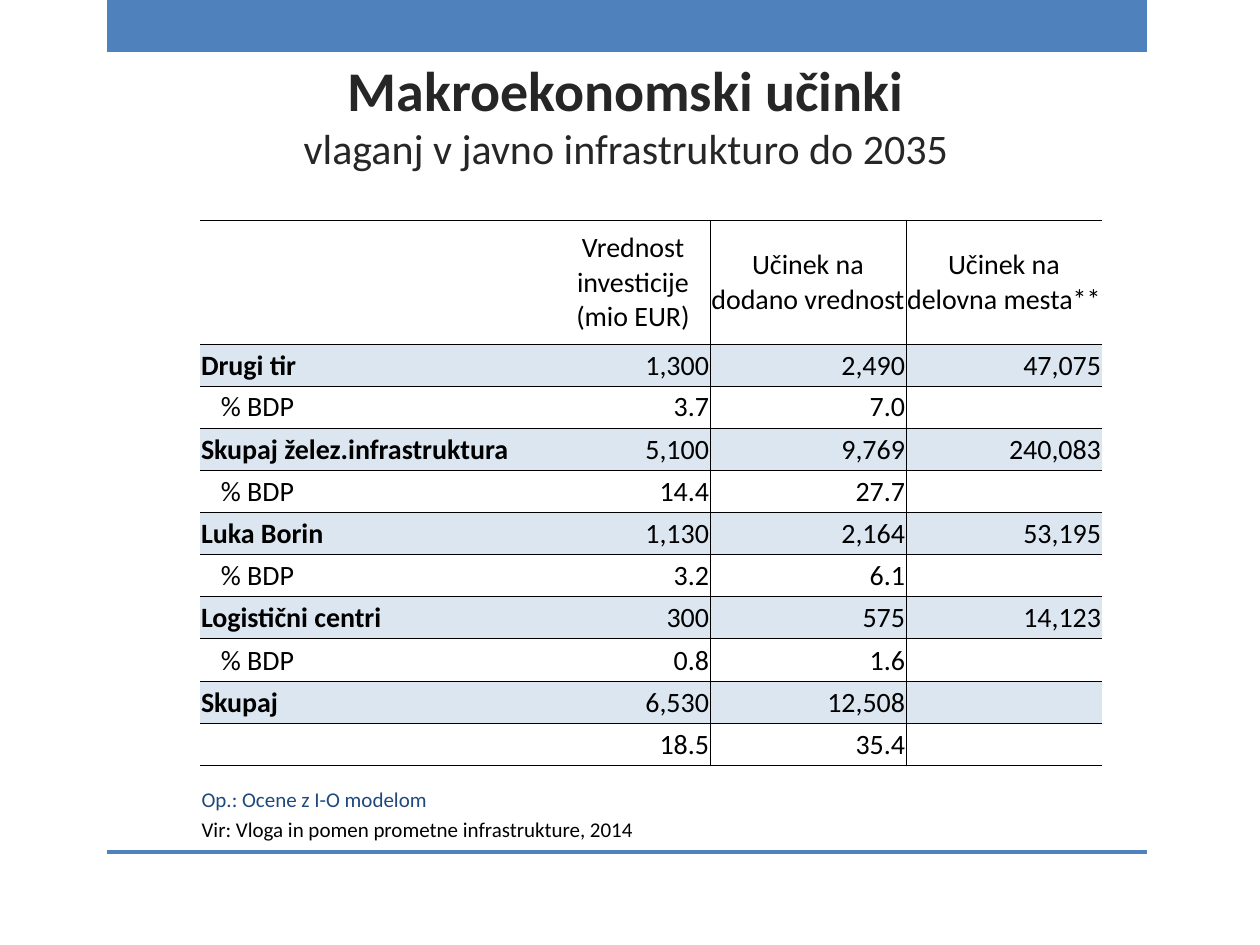
import copy

import pptx
import pptx.dml.color
import pptx.enum.shapes
import pptx.enum.text
import pptx.oxml
import pptx.oxml.ns
import pptx.util

HUES = {"bar": "4F81BD", "title": "262626", "note": "1F497D",
        "ink": "000000", "band": "DCE6F1", "plain": "FFFFFF"}
ALIGN = pptx.enum.text.PP_ALIGN
ANCHOR = pptx.enum.text.MSO_ANCHOR
NO_STYLE = "{2D5ABB26-0587-4C30-8999-92F81FD0307C}"


def emu(px):
    return pptx.util.Emu(round(px * 914400 / 126))


def hue(name):
    return pptx.dml.color.RGBColor.from_string(HUES[name])


class Deck:
    font = "Calibri"

    def __init__(self):
        self.prs = pptx.Presentation()
        self.prs.slide_width, self.prs.slide_height = emu(1260), emu(945)
        self.slide = self.prs.slides.add_slide(self.prs.slide_layouts[1])

    def style(self, run, size, color, bold=False):
        run.font.name = self.font
        run.font.size = pptx.util.Pt(size)
        run.font.bold = bold
        run.font.color.rgb = hue(color)

    def place(self, shape, box):
        shape.left, shape.top, shape.width, shape.height = map(emu, box)

    def bar(self, *box):
        kind = pptx.enum.shapes.MSO_SHAPE.RECTANGLE
        shape = self.slide.shapes.add_shape(kind, *map(emu, box))
        shape.shadow.inherit = False
        shape.fill.solid()
        shape.fill.fore_color.rgb = hue("bar")
        shape.line.fill.background()
        # Bars lie behind the placeholders
        self.slide.shapes._spTree.insert(2, shape._element)

    def title(self, box, head, sub):
        shape = self.slide.shapes.title
        self.place(shape, box)
        frame = shape.text_frame
        frame.text = head + "\v" + sub
        frame.auto_size = pptx.enum.text.MSO_AUTO_SIZE.NONE
        frame.vertical_anchor = ANCHOR.BOTTOM
        para = frame.paragraphs[0]
        para.alignment = ALIGN.CENTER
        top, low = para.runs
        self.style(top, 32, "title", True)
        self.style(low, 24, "title")
        # The line break takes the size of the first line
        gap = para._p.find(pptx.oxml.ns.qn("a:br"))
        gap.insert(0, copy.deepcopy(top._r.rPr))

    def notes(self, box, lines):
        shape = self.slide.placeholders[1]
        self.place(shape, box)
        frame = shape.text_frame
        frame.text = "\n".join(text for text, color in lines)
        frame.auto_size = pptx.enum.text.MSO_AUTO_SIZE.NONE
        frame.vertical_anchor = ANCHOR.MIDDLE
        for para, (text, color) in zip(frame.paragraphs, lines):
            props = para._p.get_or_add_pPr()
            props.set("marL", "0")
            props.set("indent", "0")
            pptx.oxml.ns.qn("a:buNone")
            props.append(pptx.oxml.parse_xml(
                f'<a:buNone {pptx.oxml.ns.nsdecls("a")}/>'))
            self.style(para.runs[0], 12, color)

    def edges(self, cell, sides):
        props = cell._tc.get_or_add_tcPr()
        for side in sides:
            props.append(pptx.oxml.parse_xml(
                f'<a:ln{side} {pptx.oxml.ns.nsdecls("a")} w="6350"><a:solidFill>'
                f'<a:srgbClr val="{HUES["ink"]}"/></a:solidFill></a:ln{side}>'))

    def cell(self, cell, text, row, col):
        band = row % 2 == 1
        rules = {"L": col > 1, "R": col in (1, 2),
                 "T": row == 0 or band, "B": not band}
        self.edges(cell, [side for side, on in rules.items() if on])
        cell.fill.solid()
        cell.fill.fore_color.rgb = hue("band" if band else "plain")
        cell.vertical_anchor = ANCHOR.MIDDLE
        inset = 21 if col == 0 and row and not band else 1
        cell.margin_left = emu(inset)
        cell.margin_right = cell.margin_top = emu(1)
        cell.margin_bottom = 0
        cell.text_frame.text = text
        para = cell.text_frame.paragraphs[0]
        if col:
            para.alignment = ALIGN.RIGHT if row else ALIGN.CENTER
        for run in para.runs:
            self.style(run, 16, "ink", band and col == 0)

    def table(self, left, top, cols, rows, data):
        box = left, top, sum(cols), sum(rows)
        table = self.slide.shapes.add_table(
            len(rows), len(cols), *map(emu, box)).table
        table.first_row = table.horz_banding = False
        mark = pptx.oxml.ns.qn("a:tableStyleId")
        table._tbl.tblPr.find(mark).text = NO_STYLE
        for col, width in zip(table.columns, cols):
            col.width = emu(width)
        for row, height in zip(table.rows, rows):
            row.height = emu(height)
        for r, line in enumerate(data):
            for c, text in enumerate(line):
                self.cell(table.cell(r, c), text, r, c)


DATA = [
    ("", "Vrednost investicije (mio EUR)", "Učinek na dodano vrednost",
     "Učinek na delovna mesta**"),
    ("Drugi tir", "1,300", "2,490", "47,075"),
    ("% BDP", "3.7", "7.0", ""),
    ("Skupaj želez.infrastruktura", "5,100", "9,769", "240,083"),
    ("% BDP", "14.4", "27.7", ""),
    ("Luka Borin", "1,130", "2,164", "53,195"),
    ("% BDP", "3.2", "6.1", ""),
    ("Logistični centri", "300", "575", "14,123"),
    ("% BDP", "0.8", "1.6", ""),
    ("Skupaj", "6,530", "12,508", ""),
    ("", "18.5", "35.4", ""),
]


def main():
    deck = Deck()
    # Frame bars
    deck.bar(107, 0, 1040, 52)
    deck.bar(107, 850, 1040, 4)
    # Heading
    deck.title((59, 0, 1134, 179), "Makroekonomski učinki",
               "vlaganj v javno infrastrukturo do 2035")
    # Effects table: a tall header, then even rows over 422 px
    rows = [124] + [42 + (i % 5 == 3) for i in range(1, len(DATA))]
    deck.table(200, 220, [356, 154, 196, 196], rows, DATA)
    # Notes below the table
    deck.notes((189, 766, 999, 96), [
        ("Op.: Ocene z I-O modelom", "note"),
        ("Vir: Vloga in pomen prometne infrastrukture, 2014", "ink")])
    deck.prs.save("out.pptx")


if __name__ == "__main__":
    main()
